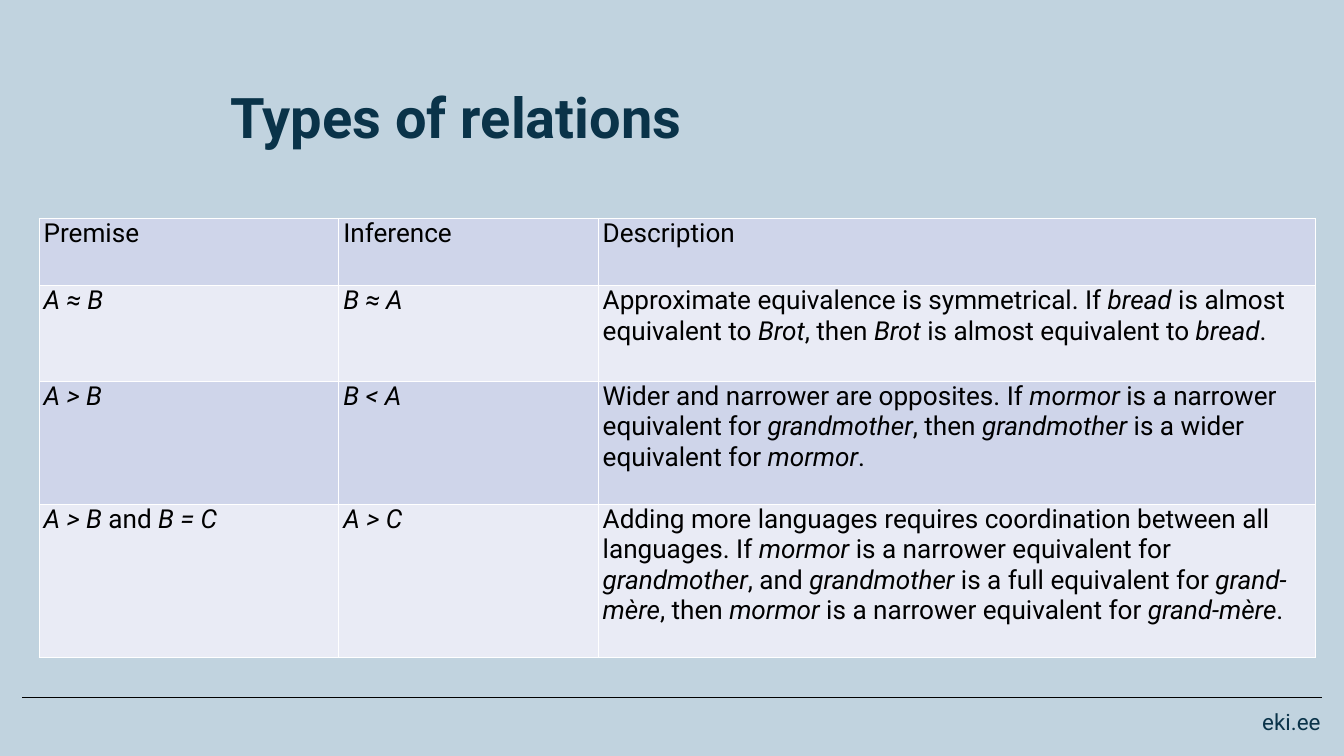
"""Build a slide with a table of relation types."""
from typing import NamedTuple

from lxml import etree
from pptx import Presentation
from pptx.dml.color import RGBColor
from pptx.enum.shapes import MSO_CONNECTOR
from pptx.enum.text import MSO_ANCHOR, PP_ALIGN
from pptx.oxml.ns import qn
from pptx.util import Inches, Pt

STRAIGHT = MSO_CONNECTOR.STRAIGHT
TOP, BOTTOM = MSO_ANCHOR.TOP, MSO_ANCHOR.BOTTOM
LEFT, RIGHT = PP_ALIGN.LEFT, PP_ALIGN.RIGHT

FONT = "Roboto"
NAVY, BLACK, WHITE, BACKGROUND = "0A3349", "000000", "FFFFFF", "C1D3DF"
BANDS = ("CFD5EA", "E9EBF5")
COLUMN_WIDTHS = (4.46, 3.86, 10.68)


class Label(NamedTuple):
    text: str
    left: float
    top: float
    width: float
    height: float
    size: int
    bold: bool = False
    align: PP_ALIGN = LEFT
    anchor: MSO_ANCHOR = TOP


class Relation(NamedTuple):
    height: float
    premise: str
    inference: str
    description: str


LABELS = (
    Label("eki.ee", 16.25, 10.54, 3.5, 0.58, 24, align=RIGHT),
    Label("Types of relations", 3.33, 1.12, 12.5, 1.17, 60, bold=True, anchor=BOTTOM),
)

RELATIONS = (
    Relation(1, "Premise", "Inference", "Description"),
    Relation(
        1.42, "*A ≈ B*", "*B ≈ A*",
        "Approximate equivalence is symmetrical. If *bread* is almost equivalent to "
        "*Brot*, then *Brot* is almost equivalent to *bread*.",
    ),
    Relation(
        1.83, "*A > B*", "*B < A*",
        "Wider and narrower are opposites. If *mormor* is a narrower equivalent for "
        "*grandmother*, then *grandmother* is a wider equivalent for *mormor*.",
    ),
    Relation(
        2.29, "*A > B *and *B = C*", "*A > C*",
        "Adding more languages requires coordination between all languages. If *mormor* "
        "is a narrower equivalent for *grandmother*, and *grandmother* is a full "
        "equivalent for *grand-mère*, then *mormor* is a narrower equivalent for "
        "*grand-mère*.",
    ),
)


def color(value: str) -> RGBColor:
    """Turn a hex string into a colour."""
    return RGBColor.from_string(value)


def set_font(p, size: int, value: str) -> None:
    """Set the shared font of a paragraph."""
    p.font.name = FONT
    p.font.size = Pt(size)
    p.font.color.rgb = color(value)


def add_label(s, label: Label) -> None:
    """Add a one-line text box."""
    box = (label.left, label.top, label.width, label.height)
    tf = s.shapes.add_textbox(*map(Inches, box)).text_frame
    tf.word_wrap = True
    tf.vertical_anchor = label.anchor
    p = tf.paragraphs[0]
    p.text = label.text
    p.alignment = label.align
    p.line_spacing = 0.9
    set_font(p, label.size, NAVY)
    p.font.bold = label.bold


def add_rule(s) -> None:
    """Add the thin line above the footer."""
    y = Inches(10.38)
    rule = s.shapes.add_connector(STRAIGHT, Inches(0.33), y, Inches(19.67), y)
    rule.line.color.rgb = color(BLACK)
    rule.line.width = Pt(1)
    etree.SubElement(rule._element.spPr, qn("a:effectLst"))


def set_borders(cell, value: str, width: float) -> None:
    """Draw all four borders of a cell."""
    tc_pr = cell._tc.get_or_add_tcPr()
    for side in ("lnL", "lnR", "lnT", "lnB"):
        ln = etree.SubElement(tc_pr, qn(f"a:{side}"), w=str(Pt(width)))
        fill = etree.SubElement(ln, qn("a:solidFill"))
        etree.SubElement(fill, qn("a:srgbClr"), val=value)


def fill_cell(cell, text: str, band: str) -> None:
    """Fill a cell, with the text between asterisks in italics."""
    cell.margin_left = cell.margin_right = Inches(0.07)
    cell.margin_top = cell.margin_bottom = 0
    set_borders(cell, WHITE, 1)
    cell.fill.solid()
    cell.fill.fore_color.rgb = color(band)
    p = cell.text_frame.paragraphs[0]
    set_font(p, 28, BLACK)
    for i, part in enumerate(text.split("*")):
        if part:
            r = p.add_run()
            r.text = part
            r.font.italic = i % 2 == 1


def add_relations(s, relations: tuple[Relation, ...]) -> None:
    """Add the banded table of relations."""
    height = sum(relation.height for relation in relations)
    table = s.shapes.add_table(
        len(relations), len(COLUMN_WIDTHS),
        Inches(0.58), Inches(3.25), Inches(sum(COLUMN_WIDTHS)), Inches(height),
    ).table
    table.first_row = False
    table.horz_banding = False
    for column, width in zip(table.columns, COLUMN_WIDTHS):
        column.width = Inches(width)
    for i, (row, relation) in enumerate(zip(table.rows, relations)):
        row.height = Inches(relation.height)
        for cell, text in zip(row.cells, relation[1:]):
            fill_cell(cell, text, BANDS[i % 2])


def main() -> None:
    """Build and save the slide."""
    prs = Presentation()
    prs.slide_width, prs.slide_height = Inches(20), Inches(11.25)
    s = prs.slides.add_slide(prs.slide_layouts[6])
    s.background.fill.solid()
    s.background.fill.fore_color.rgb = color(BACKGROUND)
    add_rule(s)
    for label in LABELS:
        add_label(s, label)
    add_relations(s, RELATIONS)
    prs.save("out.pptx")


if __name__ == "__main__":
    main()
